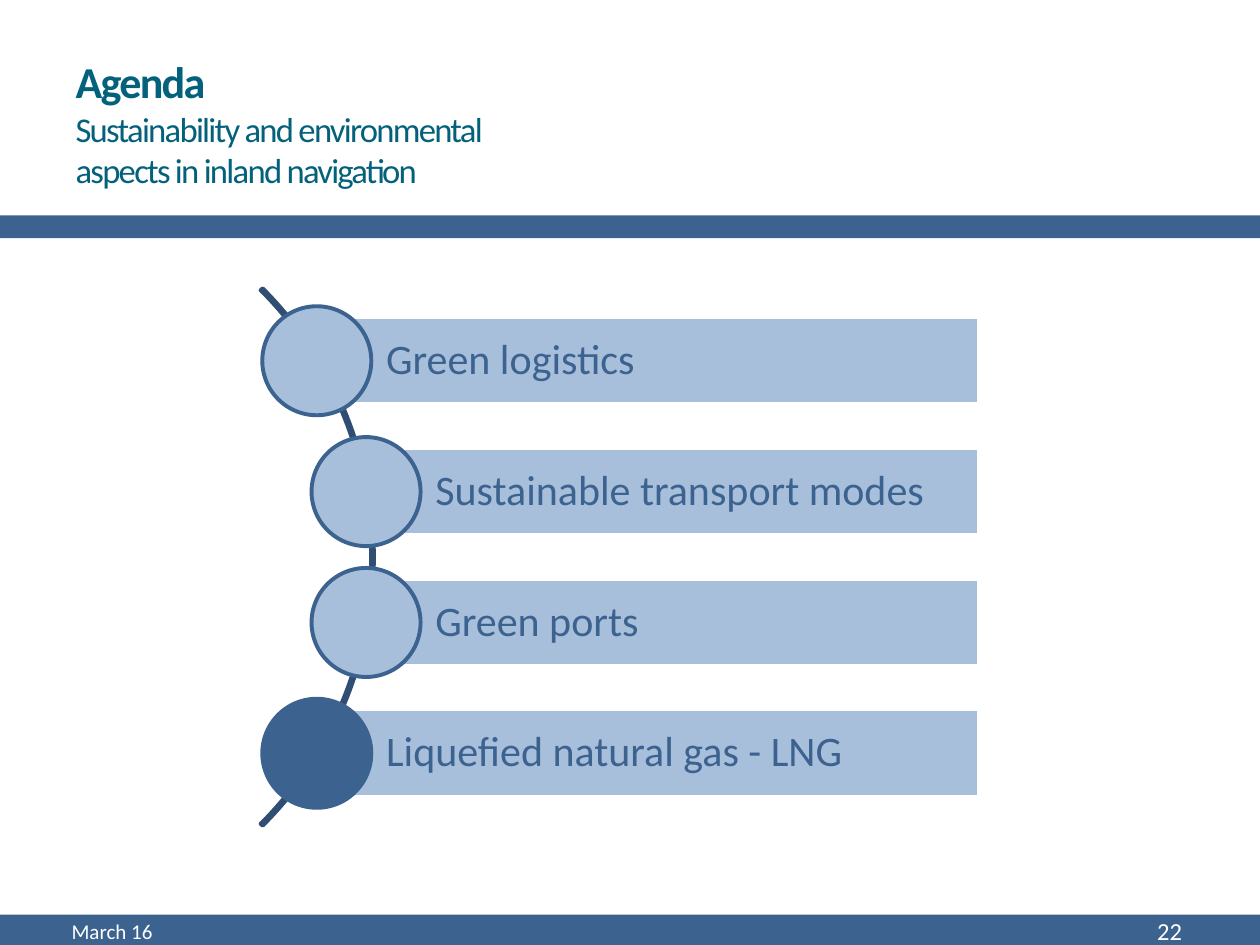
from math import sqrt
from pptx import Presentation
from pptx.dml.color import RGBColor
from pptx.enum.shapes import MSO_SHAPE
from pptx.enum.text import MSO_ANCHOR, PP_ALIGN
from pptx.util import Inches, Pt

RECT, OVAL, ARC = MSO_SHAPE.RECTANGLE, MSO_SHAPE.OVAL, MSO_SHAPE.BLOCK_ARC
LEFT, RIGHT, MIDDLE = PP_ALIGN.LEFT, PP_ALIGN.RIGHT, MSO_ANCHOR.MIDDLE
WIDE, HIGH = 10, 7.5
BLUE, PALE, NAVY, TEAL, WHITE = "3C628F", "A8BFDB", "304E73", "04617B", "FFFFFF"
TOPICS = ["Green logistics", "Sustainable transport modes",
          "Green ports", "Liquefied natural gas - LNG"]


def tint(code):
    """Turn a hex string into a colour."""
    return RGBColor.from_string(code)


def place(shape, box):
    """Move a shape to a box of left, top, width and height in inches."""
    shape.left, shape.top, shape.width, shape.height = map(Inches, box)


def draw(slide, kind, box, fill=None, line=None, weight=2.08):
    """Add a flat preset shape with an optional fill and line."""
    shape = slide.shapes.add_shape(kind, *map(Inches, box))
    shape.shadow.inherit = False
    if fill:
        shape.fill.solid()
        shape.fill.fore_color.rgb = tint(fill)
    else:
        shape.fill.background()
    if line:
        shape.line.color.rgb = tint(line)
        shape.line.width = Pt(weight)
    else:
        shape.line.fill.background()
    return shape


def write(shape, text, size, color, bold=False, align=LEFT, space=None,
          pads=(0.1, 0.05, 0.1, 0.05), gap=None):
    """Append a formatted run to the first paragraph of a shape."""
    frame = shape.text_frame
    frame.word_wrap, frame.vertical_anchor = True, MIDDLE
    (frame.margin_left, frame.margin_top,
     frame.margin_right, frame.margin_bottom) = map(Inches, pads)
    para = frame.paragraphs[0]
    para.alignment = align
    para.line_spacing = gap
    if para.runs:
        para.add_line_break()
    run = para.add_run()
    run.text = text
    font = run.font
    font.name, font.size, font.bold = "Calibri", Pt(size), bold
    font.color.rgb = tint(color)
    if space:
        run._r.get_or_add_rPr().set("spc", str(int(space * 100)))


def header(slide, box):
    """Fill the title and draw the band beneath it."""
    left, top, wide, high = box
    title = slide.shapes.title
    place(title, (left + wide * 0.05, top + high * 0.23, wide * 0.52, high * 0.57))
    write(title, "Agenda", 25.2, TEAL, bold=True, space=-1, gap=1.0)
    for text in ("Sustainability and environmental ", "aspects in inland navigation"):
        write(title, text, 19.8, TEAL, space=-1, gap=1.0)
    draw(slide, RECT, (left, top + high * 0.905, wide, high * 0.095), BLUE)


def agenda(slide, box, topics, active):
    """Set topic bars and dots along an arc, with the active dot filled."""
    left, top, wide, high = box
    arc = draw(slide, ARC, (left - high / 2, top, high, high), line=NAVY)
    for i, value in enumerate((189, 27, 0.004)):
        arc.adjustments[i] = value
    step, reach = high * 0.172, high * 0.497
    bar, dot = step * 2 / 3, step * 5 / 6
    for i, text in enumerate(topics):
        drop = (i - (len(topics) - 1) / 2) * step
        x = left + sqrt(reach ** 2 - drop ** 2)
        y = top + high / 2 + drop
        strip = draw(slide, RECT, (x, y - bar / 2, left + wide - x, bar), PALE, WHITE)
        write(strip, text, 24, BLUE, pads=(0.55, 0.07, 0.07, 0.07), gap=0.9)
        draw(slide, OVAL, (x - dot / 2, y - dot / 2, dot, dot),
             BLUE if i == active else PALE, BLUE, 2.25)


def footer(slide, box):
    """Draw the bottom band with the date and the page number."""
    left, top, wide, high = box
    draw(slide, RECT, box, BLUE)
    tall = high * 1.5
    y = top + high * 0.54 - tall / 2
    for text, size, x, span, align in (("March 16", 12, 0.047, 0.317, LEFT),
                                       ("22", 14, 0.831, 0.117, RIGHT)):
        area = (left + wide * x, y, wide * span, tall)
        label = slide.shapes.add_textbox(*map(Inches, area))
        write(label, text, size, WHITE, align=align)


def main():
    """Build and save the slide."""
    deck = Presentation()
    deck.slide_width, deck.slide_height = Inches(WIDE), Inches(HIGH)
    slide = deck.slides.add_slide(deck.slide_layouts[5])
    header(slide, (0, 0, WIDE, HIGH * 0.252))
    agenda(slide, (-0.05, HIGH * 0.187, WIDE * 0.782, HIGH * 0.805), TOPICS, 3)
    footer(slide, (0, HIGH * 0.968, WIDE, HIGH * 0.032))
    deck.save("out.pptx")


if __name__ == "__main__":
    main()
